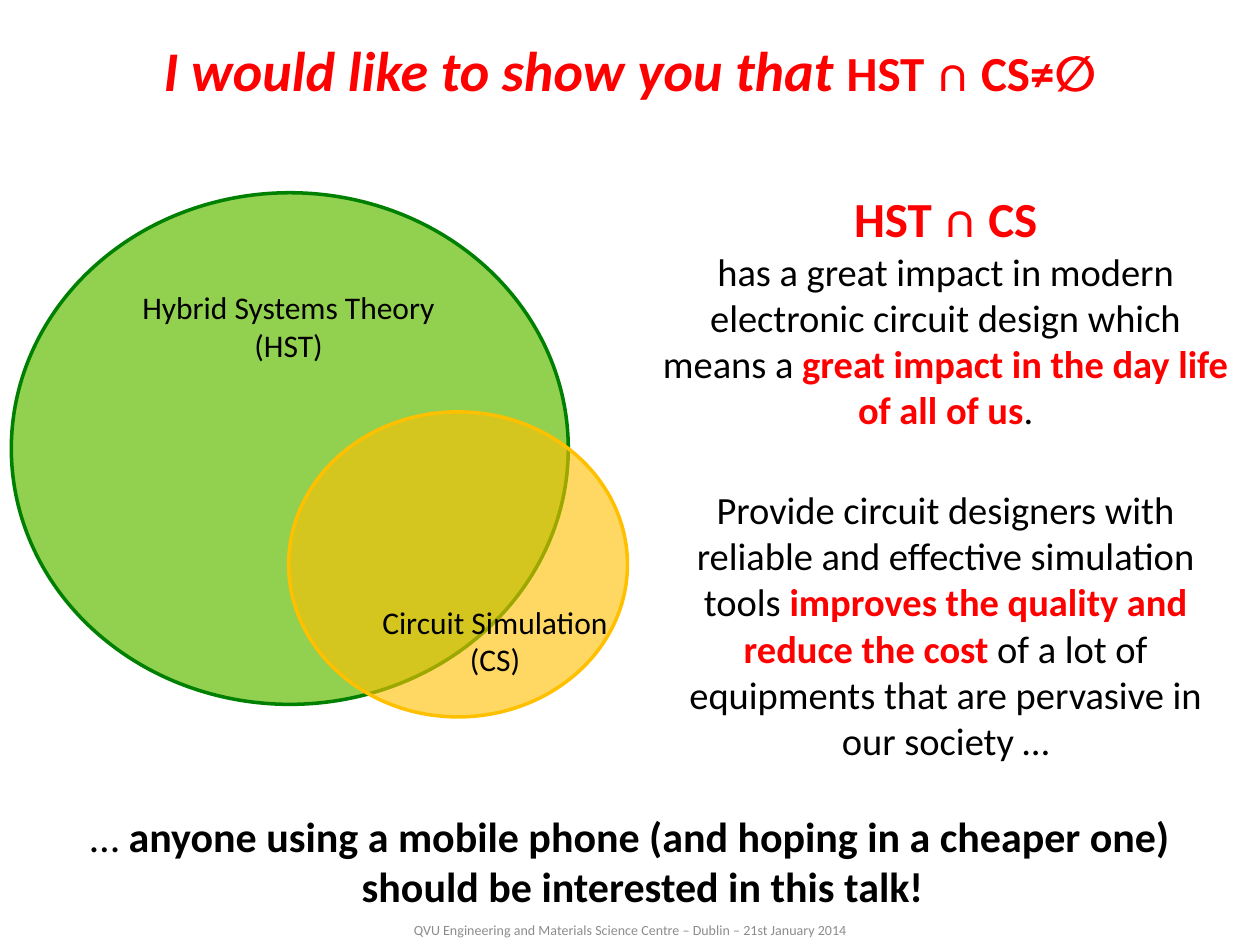
from lxml import etree
from pptx import Presentation, util as u
from pptx.dml.color import RGBColor
from pptx.enum import shapes, text
from pptx.oxml.ns import qn

WIDTH, HEIGHT = u.Inches(10), u.Inches(7.5)
COLUMN, ROW = WIDTH / 100, HEIGHT / 75
RED, BLACK, GRAY = "FF0000", "000000", "8C8C8C"
LIME, GREEN, AMBER = "92D050", "008000", "FFC000"


def color(value):
    return RGBColor.from_string(value)


def grid(left, top, columns, rows):
    """Turn grid columns and rows into a box in slide units."""
    return (int(left * COLUMN), int(top * ROW),
            int(columns * COLUMN), int(rows * ROW))


def inside(box, left, top, width, height):
    """Return the part of a box given by shares of its size."""
    x, y, w, h = box
    return int(x + left * w), int(y + top * h), int(width * w), int(height * h)


def write(frame, paragraphs, size=18, ink=BLACK, hanging=0):
    """Fill a frame; each paragraph is a list of (words, format) runs."""
    frame.clear()
    for index, runs in enumerate(paragraphs):
        paragraph = frame.paragraphs[0] if index == 0 else frame.add_paragraph()
        paragraph.alignment = text.PP_ALIGN.CENTER
        if hanging:
            properties = paragraph._p.get_or_add_pPr()
            properties.set("marL", str(u.Inches(hanging)))
            properties.set("indent", str(-u.Inches(hanging)))
        for words, style in runs:
            run = paragraph.add_run()
            run.text = words
            font = run.font
            font.name = "Calibri"
            font.size = u.Pt(style.get("size", size))
            font.bold = style.get("bold", False)
            font.italic = style.get("italic", False)
            font.color.rgb = color(style.get("ink", ink))


def add_text(parent, box, paragraphs, wrap=True,
             anchor=text.MSO_ANCHOR.TOP, **style):
    frame = parent.add_textbox(*box).text_frame
    frame.word_wrap = wrap
    frame.auto_size = text.MSO_AUTO_SIZE.SHAPE_TO_FIT_TEXT
    frame.vertical_anchor = anchor
    write(frame, paragraphs, **style)


def add_set(parent, box, fill, line, opacity=100):
    """Draw one ellipse of the Venn diagram."""
    ellipse = parent.add_shape(shapes.MSO_SHAPE.OVAL, *box)
    ellipse.shadow.inherit = False
    ellipse.fill.solid()
    ellipse.fill.fore_color.rgb = color(fill)
    ellipse.line.color.rgb = color(line)
    ellipse.line.width = u.Pt(2)
    if opacity < 100:
        tint = ellipse._element.spPr.find(qn("a:solidFill"))[0]
        etree.SubElement(tint, qn("a:alpha")).set("val", str(opacity * 1000))


def add_title(slide, box):
    title = slide.shapes.title
    title.left, title.top, title.width, title.height = box
    title.text_frame.vertical_anchor = text.MSO_ANCHOR.MIDDLE
    write(title.text_frame, [[
        ("I would like to show you that ", {"size": 32, "italic": True, "bold": True}),
        ("HST ∩ CS≠∅", {"size": 28, "bold": True})]], ink=RED)


def add_venn(slide, box):
    add_set(slide.shapes, inside(box, 0, 0, 0.904, 0.976), LIME, GREEN)
    add_text(slide.shapes, inside(box, 0.14, 0.17, 0.62, 0.17),
             [[("Hybrid Systems Theory", {})], [("(HST)", {})]])
    group = slide.shapes.add_group_shape().shapes
    add_set(group, inside(box, 0.45, 0.418, 0.55, 0.582), AMBER, AMBER, opacity=61)
    add_text(group, inside(box, 0.58, 0.77, 0.41, 0.17),
             [[("Circuit Simulation", {})], [("(CS)", {})]], wrap=False)


def add_arguments(slide, box):
    strong = {"ink": RED, "bold": True}
    add_text(slide.shapes, inside(box, 0, 0, 1, 0.44), [
        [("HST ∩ CS", {**strong, "size": 28})],
        [("has a great impact in modern electronic circuit design which means a ", {}),
         ("great impact in the day life of all of us", strong),
         (".", {})]], size=22)
    add_text(slide.shapes, inside(box, 0, 0.504, 1, 0.496), [
        [("Provide circuit designers with reliable and effective simulation tools ", {}),
         ("improves the quality and reduce the cost ", strong),
         ("of a lot of equipments that are pervasive in our society …", {})]], size=22)


def add_conclusion(slide, box):
    add_text(slide.shapes, box, [[
        ("… ", {}),
        ("anyone using a mobile phone (and hoping in a cheaper one) "
         "should be interested in this talk!", {"bold": True})]],
        size=24, hanging=0.2)


def add_footer(slide, box):
    add_text(slide.shapes, box, [[
        ("QVU Engineering and Materials Science Centre – Dublin – 21st January 2014", {})]],
        size=8, ink=GRAY, anchor=text.MSO_ANCHOR.MIDDLE)


def main():
    presentation = Presentation()
    presentation.slide_width, presentation.slide_height = WIDTH, HEIGHT
    slide = presentation.slides.add_slide(presentation.slide_layouts[5])
    add_title(slide, grid(5, 2.2, 90, 6.5))
    add_conclusion(slide, grid(2.1, 63.8, 95.8, 9.1))
    add_venn(slide, grid(0.9, 15.3, 48.9, 41.6))
    add_arguments(slide, grid(51.3, 14.5, 47.5, 46.8))
    add_footer(slide, grid(6.2, 72.6, 87.7, 2.4))
    presentation.save("out.pptx")


if __name__ == "__main__":
    main()
